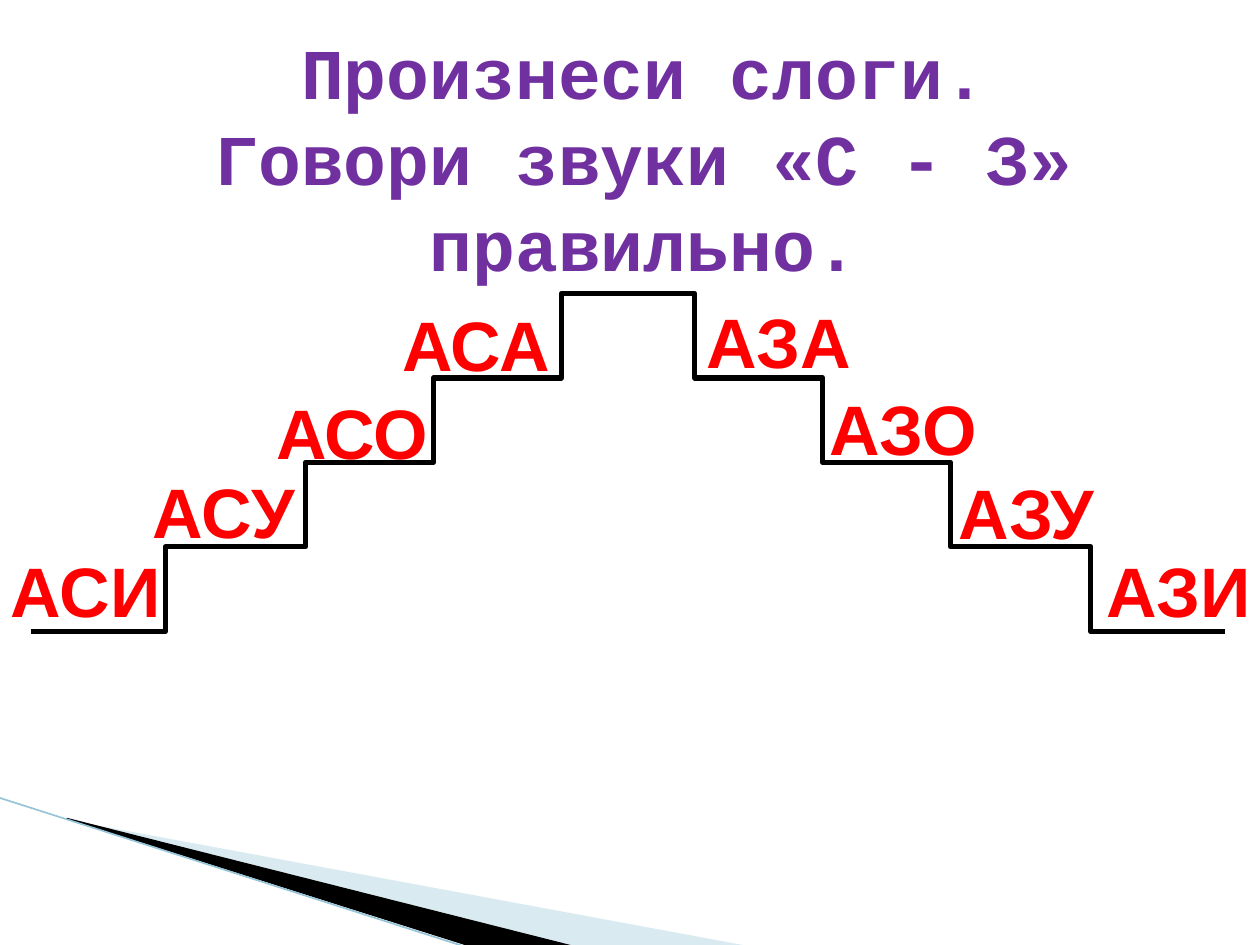
from dataclasses import dataclass
from lxml import etree
from pptx import Presentation, util as u
from pptx.dml.color import RGBColor
from pptx.enum import shapes, text
from pptx.oxml.ns import qn


@dataclass(frozen=True)
class Theme:
    head: str = "7030A0"
    label: str = "FF0000"
    rim: str = "054697"
    ink: str = "000000"
    pale: str = "A0CBDC"
    edge: str = "97C5D8"
    head_size: float = 40.8
    label_size: float = 40


T = Theme()
W, H = u.Inches(10), u.Inches(7.5)
COL, ROW = W / 100, H / 75  # slide grid: 100 columns by 75 rows


def grid(x, y):
    return round(x * COL), round(y * ROW)


def place(shape, box):
    shape.left, shape.top = grid(*box[:2])
    shape.width, shape.height = grid(*box[2:])


def write(frame, copy, *, size, font, color, lead=None, rim=None):
    """Fill a text frame with bold, centred lines."""
    frame.text = copy
    frame.word_wrap = True
    frame.vertical_anchor = text.MSO_ANCHOR.TOP
    for para in frame.paragraphs:
        para.alignment = text.PP_ALIGN.CENTER
        if lead:
            para.line_spacing = u.Pt(lead)
        for run in para.runs:
            run.font.size, run.font.bold = u.Pt(size), True
            run.font.name = font
            run.font.color.rgb = RGBColor.from_string(color)
            if rim:
                line = etree.Element(qn("a:ln"), w=str(u.Pt(1)))
                fill = etree.SubElement(line, qn("a:solidFill"))
                etree.SubElement(fill, qn("a:srgbClr"), val=rim)
                run.font._element.insert(0, line)


def link(slide, kind, start, end, color, width):
    line = slide.shapes.add_connector(kind, *grid(*start), *grid(*end))
    line.line.color.rgb = RGBColor.from_string(color)
    line.line.width = u.Pt(width)
    etree.SubElement(line._element.spPr, qn("a:effectLst"))


def wedge(slide, box, points, color, alpha=None):
    """Draw a filled outline from points given as shares of the box."""
    x, y, w, h = box
    dots = [grid(x + w * px, y + h * py) for px, py in points]
    path = slide.shapes.build_freeform(*dots[0])
    path.add_line_segments(dots[1:], close=True)
    shape = path.convert_to_shape()
    shape.shadow.inherit = False
    shape.fill.solid()
    shape.fill.fore_color.rgb = RGBColor.from_string(color)
    shape.line.fill.background()
    if alpha:
        tint = shape._element.spPr.find(".//" + qn("a:srgbClr"))
        etree.SubElement(tint, qn("a:alpha"), val=str(alpha * 1000))


def corner(slide, box):
    """Sweeping wedges in the lower left corner."""
    x, y, w, h = box
    wedge(slide, (5.5, 65, 54, 10.1),
          [(0, 0.01), (1, 1), (0.74, 1), (0, 0)], T.pale, 40)
    wedge(slide, (5.3, 64.9, 40.4, 10.2),
          [(0, 0), (1, 1), (0.79, 1), (0, 0.01)], T.ink)
    link(slide, shapes.MSO_CONNECTOR.STRAIGHT, (x, y), (x + w, y + h),
         T.edge, 0.95)


def title(slide, box):
    head = slide.shapes.title
    place(head, box)
    frame = head.text_frame
    frame.auto_size = text.MSO_AUTO_SIZE.NONE
    frame.margin_top = u.Inches(0.12)
    write(frame, "Произнеси слоги.\nГовори звуки «С - З» правильно.",
          size=T.head_size, font="Courier New", color=T.head, lead=49.2)


def stairs(slide, box, count=4):
    """Two mirrored flights that meet at the top."""
    x, y, w, h = box
    rise, tread, extra = h / count, 10.15, 1.45
    for i in range(count):
        start = extra + tread * i if i else 0
        end = extra + tread * (i + 2) - (0.5 if i == 0 else 0)
        low = y + h - rise * i
        for side in (False, True):
            a, b = [x + w - d if side else x + d for d in (start, end)]
            link(slide, shapes.MSO_CONNECTOR.ELBOW, (a, low),
                 (b, low - rise), T.ink, 3)


def labels(slide, items):
    """One syllable on each step: text, left, top, width."""
    for copy, x, y, w in items:
        box = slide.shapes.add_textbox(*grid(x, y), *grid(w, 7.7))
        write(box.text_frame, copy, size=T.label_size, font="Arial",
              color=T.label, rim=T.rim)
        box.text_frame.auto_size = text.MSO_AUTO_SIZE.SHAPE_TO_FIT_TEXT


SYLLABLES = [
    ("АСИ", -0.4, 43, 14.4), ("АСУ", 9.1, 36.7, 17.3),
    ("АСО", 19.3, 30.4, 17.3), ("АСА", 30.3, 23.4, 15),
    ("АЗА", 54.7, 23.2, 14.2), ("АЗО", 63.4, 30.1, 16.6),
    ("АЗУ", 72, 36.8, 18.9), ("АЗИ", 85.9, 43, 15.3),
]


def main():
    deck = Presentation()
    deck.slide_width, deck.slide_height = W, H
    slide = deck.slides.add_slide(deck.slide_layouts[5])
    corner(slide, (-0.1, 63.3, 37.2, 11.9))
    title(slide, (2.5, 1, 97.2, 18.3))
    stairs(slide, (2.5, 23.3, 94.7, 26.8))
    labels(slide, SYLLABLES)
    deck.save("out.pptx")


if __name__ == "__main__":
    main()
